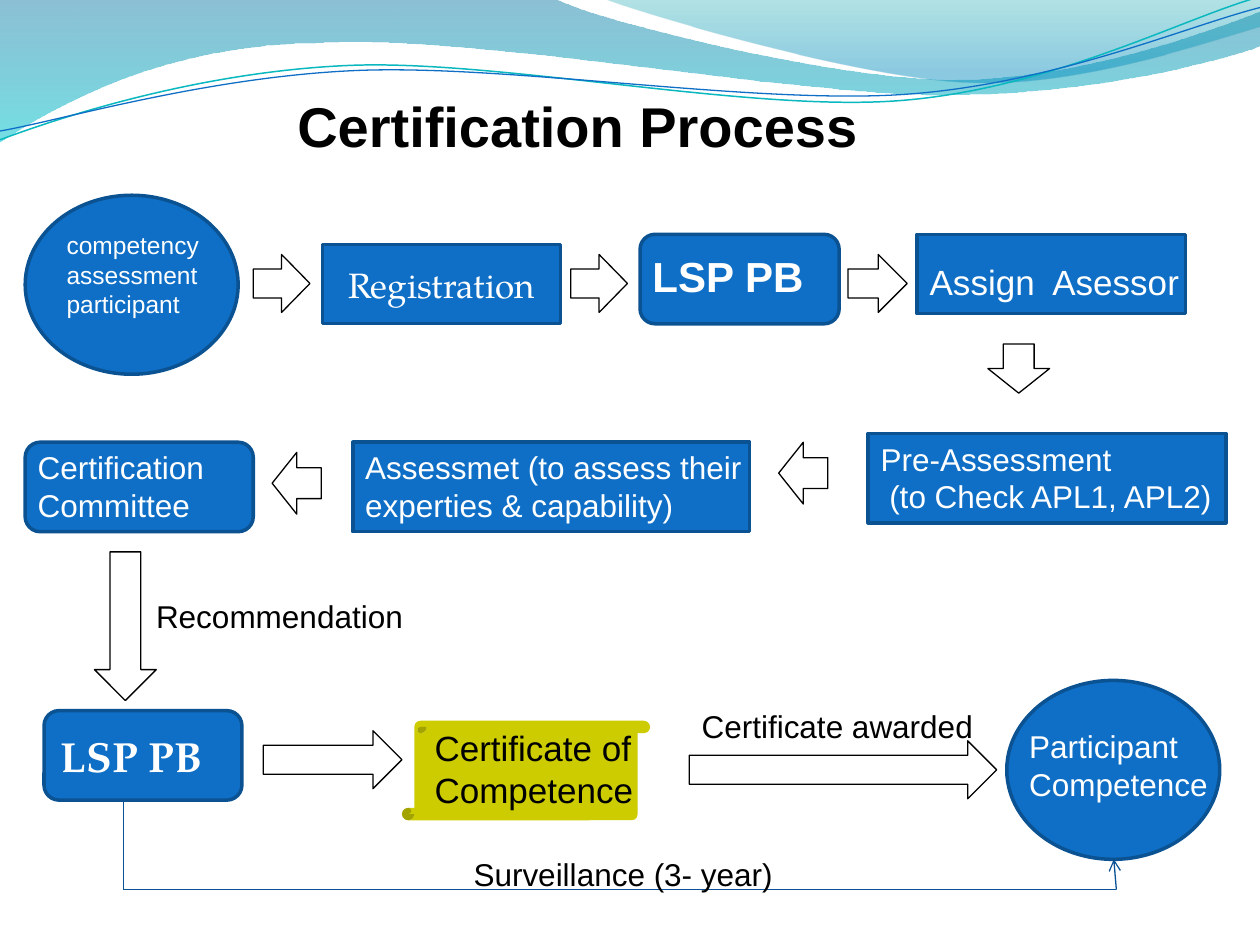
from lxml import etree
from pptx import Presentation
from pptx.dml.color import RGBColor
from pptx.enum.shapes import MSO_CONNECTOR, MSO_SHAPE
from pptx.enum.text import MSO_ANCHOR, MSO_AUTO_SIZE, PP_ALIGN
from pptx.oxml import parse_xml
from pptx.oxml.ns import nsdecls, qn
from pptx.util import Inches, Pt

RECT, ROUND, OVAL = MSO_SHAPE.RECTANGLE, MSO_SHAPE.ROUNDED_RECTANGLE, MSO_SHAPE.OVAL
SCROLL = MSO_SHAPE.VERTICAL_SCROLL
RIGHT, DOWN = MSO_SHAPE.RIGHT_ARROW, MSO_SHAPE.DOWN_ARROW
CENTER, LEFT = PP_ALIGN.CENTER, PP_ALIGN.LEFT

THEME = {
    "blue": "0F6FC6", "edge": "0B5292", "route": "095295", "teal": "0AB8BF",
    "white": "FFFFFF", "black": "000000", "olive": "CCCC00",
    "sans": "Arial", "serif": "TeX Gyre Pagella",
    "title": 32, "strong": 24, "large": 20, "body": 18, "small": 14,
    "box line": 2, "thin line": 0.75, "wave line": 0.85,
}

# Header waves: start point, then straight (2 numbers) or cubic (6 numbers) steps
WAVES = [
    ((0, -0.01), [(4.4, -0.01), (4.76, 0.17, 6.64, 0.63, 7.58, 0.63),
                  (8.53, 0.63, 9.58, 0.26, 10, 0.09), (10.01, 0.36),
                  (9.83, 0.44, 8.7, 0.76, 7.46, 0.75),
                  (6.22, 0.75, 3.82, 0.28, 2.57, 0.34),
                  (1.29, 0.35, 0.46, 0.83, -0.01, 1.13)],
     [(0, "0074A1", 45), (100, "00C6CF", 55)]),
    ((4.79, -0.01), [(5.09, 0.11, 6.82, 0.62, 7.69, 0.65),
                     (8.56, 0.69, 9.61, 0.32, 10, 0.21), (10, 0)],
     [(0, "00A1A9", 30), (80, "008BBF", 45)]),
]
WAVE_LINES = [
    ((0, 1.11), [(0.48, 0.93, 1.58, 0.57, 2.77, 0.52),
                 (3.95, 0.47, 5.93, 0.89, 7.13, 0.8),
                 (8.33, 0.71, 9.38, 0.15, 9.98, -0.02)], "teal", "wave line"),
    ((0, 1.04), [(0.47, 0.96, 1.64, 0.61, 2.83, 0.56),
                 (4.03, 0.51, 5.97, 0.83, 7.17, 0.75),
                 (8.36, 0.67, 9.41, 0.21, 10, 0.06)], "blue", "thin line"),
]

# Arrows: preset, left, top, width, height, rotation
ARROWS = [
    (RIGHT, 2.01, 2.02, 0.45, 0.46, 0),
    (RIGHT, 4.53, 2.02, 0.45, 0.46, 0),
    (RIGHT, 6.73, 2.02, 0.47, 0.46, 0),
    (DOWN, 7.84, 2.73, 0.49, 0.39, 0),
    (DOWN, 6.13, 3.56, 0.49, 0.39, 90),
    (DOWN, 2.11, 3.64, 0.49, 0.39, 90),
    (DOWN, 0.75, 4.38, 0.49, 1.18, 0),
    (RIGHT, 2.09, 5.8, 1.1, 0.46, 0),
    (RIGHT, 5.47, 5.88, 2.44, 0.46, 0),
]

# Steps: preset, left, top, width, height, own text, alignment, text format
STEPS = [
    (OVAL, 0.2, 1.55, 1.69, 1.42, None, None, None),
    (RECT, 2.56, 1.94, 1.89, 0.63, "Registration", CENTER, ("serif", "large", "white", False)),
    (ROUND, 5.08, 1.86, 1.58, 0.71, None, None, None),
    (RECT, 7.28, 1.86, 2.13, 0.63, None, None, None),
    (RECT, 6.89, 3.44, 2.84, 0.71, None, None, None),
    (RECT, 2.8, 3.51, 3.15, 0.71, None, None, None),
    (ROUND, 0.2, 3.51, 1.81, 0.71, None, None, None),
    (ROUND, 0.35, 5.64, 1.57, 0.71, "LSP PB", LEFT, ("serif", "strong", "white", True)),
    (SCROLL, 3.19, 5.72, 1.97, 0.79, None, None, None),
    (OVAL, 7.99, 5.4, 1.69, 1.42, None, None, None),
]

# Labels: text, left, top, width, height, size, colour
LABELS = [
    ("competency assessment participant", 0.43, 1.78, 1.3, 0.81, "small", "white"),
    ("LSP PB", 5.08, 1.94, 1.42, 0.51, "strong", "white"),
    ("Assign  Asessor", 7.28, 2.02, 2.44, 0.44, "large", "white"),
    ("Pre-Assessment\n (to Check APL1, APL2)", 6.89, 3.44, 2.99, 0.71, "body", "white"),
    ("Assessmet (to assess their experties & capability)", 2.8, 3.51, 3.39, 0.71, "body", "white"),
    ("Certification Committee", 0.2, 3.51, 1.81, 0.71, "body", "white"),
    ("Recommendation", 1.14, 4.69, 2.36, 0.4, "body", "black"),
    ("Certificate of Competence", 3.35, 5.72, 2.05, 0.77, "large", "black"),
    ("Certificate awarded", 5.47, 5.56, 2.36, 0.4, "body", "black"),
    ("Surveillance (3- year)", 3.66, 6.74, 3.15, 0.4, "body", "black"),
    ("Participant Competence", 8.07, 5.72, 1.73, 0.71, "body", "white"),
]
SURVEILLANCE_ROUTE = [(0.98, 6.35), (0.98, 7.06), (8.86, 7.06), (8.84, 6.82)]


def color(name):
    return RGBColor.from_string(THEME[name])


def set_line(shape, name, width):
    shape.line.color.rgb = color(name)
    shape.line.width = Pt(THEME[width])


def write(frame, text, alignment, font, size, ink, bold):
    values = {"name": THEME[font], "size": Pt(THEME[size]), "bold": bold}
    for index, line in enumerate(text.split("\n")):
        paragraph = frame.add_paragraph() if index else frame.paragraphs[0]
        paragraph.alignment = alignment
        run = paragraph.add_run()
        run.text = line
        for key, value in values.items():
            setattr(run.font, key, value)
        run.font.color.rgb = color(ink)


def add_curve(slide, start, steps, close):
    """Draw the control points as segments, then join each cubic's three into one curve."""
    points = [(Inches(x), Inches(y)) for step in steps
              for x, y in zip(step[::2], step[1::2])]
    builder = slide.shapes.build_freeform(Inches(start[0]), Inches(start[1]))
    builder.add_line_segments(points, close=close)
    shape = builder.convert_to_shape()
    shape.shadow.inherit = False
    segments = iter(list(shape.element.iter(qn("a:lnTo"))))
    for step in steps:
        first = next(segments)
        if len(step) == 6:
            curve = etree.Element(qn("a:cubicBezTo"))
            first.addprevious(curve)
            for segment in (first, next(segments), next(segments)):
                curve.append(segment[0])
                segment.getparent().remove(segment)
    return shape


def set_gradient(shape, stops):
    stop_xml = "".join(
        f'<a:gs pos="{position * 1000}"><a:srgbClr val="{tint}">'
        f'<a:alpha val="{opacity * 1000}"/></a:srgbClr></a:gs>'
        for position, tint, opacity in stops)
    gradient = parse_xml(f'<a:gradFill {nsdecls("a")} rotWithShape="1"><a:gsLst>{stop_xml}'
                         '</a:gsLst><a:lin ang="5400000" scaled="0"/></a:gradFill>')
    shape.element.spPr.find(qn("a:custGeom")).addnext(gradient)


def add_preset(slide, preset, bounds, fill):
    shape = slide.shapes.add_shape(preset, *map(Inches, bounds))
    shape.shadow.inherit = False
    shape.fill.solid()
    shape.fill.fore_color.rgb = color(fill)
    return shape


def add_label(slide, text, bounds, alignment, size, ink, bold, wrap=True):
    frame = slide.shapes.add_textbox(*map(Inches, bounds)).text_frame
    frame.word_wrap = wrap
    frame.auto_size = MSO_AUTO_SIZE.SHAPE_TO_FIT_TEXT
    write(frame, text, alignment, "sans", size, ink, bold)


def main():
    presentation = Presentation()
    presentation.slide_width, presentation.slide_height = Inches(10), Inches(7.5)
    slide = presentation.slides.add_slide(presentation.slide_layouts[6])

    # Header waves
    for start, steps, stops in WAVES:
        wave = add_curve(slide, start, steps, True)
        wave.line.fill.background()
        set_gradient(wave, stops)
    for start, steps, ink, width in WAVE_LINES:
        wave = add_curve(slide, start, steps, False)
        wave.fill.background()
        set_line(wave, ink, width)

    # Title
    add_label(slide, "Certification Process", (2.24, 0.68, 4.69, 0.64),
              CENTER, "title", "black", True, wrap=False)

    # Arrows and process steps
    for preset, *bounds, rotation in ARROWS:
        arrow = add_preset(slide, preset, bounds, "white")
        arrow.rotation = rotation
        set_line(arrow, "black", "thin line")
    for preset, *bounds, text, alignment, text_format in STEPS:
        step = add_preset(slide, preset, bounds, "olive" if preset == SCROLL else "blue")
        if preset == SCROLL:
            step.line.fill.background()
        else:
            set_line(step, "edge", "box line")
        if text:
            step.text_frame.vertical_anchor = MSO_ANCHOR.MIDDLE
            write(step.text_frame, text, alignment, *text_format)

    # Surveillance route, ending in an arrowhead
    for begin, end in zip(SURVEILLANCE_ROUTE, SURVEILLANCE_ROUTE[1:]):
        connector = slide.shapes.add_connector(MSO_CONNECTOR.STRAIGHT, *map(Inches, begin + end))
        set_line(connector, "route", "thin line")
        etree.SubElement(connector.element.spPr, qn("a:effectLst"))
    line_element = connector.element.spPr.find(qn("a:ln"))
    etree.SubElement(line_element, qn("a:tailEnd"), type="arrow")

    # Labels
    for text, *bounds, size, ink in LABELS:
        add_label(slide, text, bounds, LEFT, size, ink, size == "strong")

    presentation.save("out.pptx")


if __name__ == "__main__":
    main()
